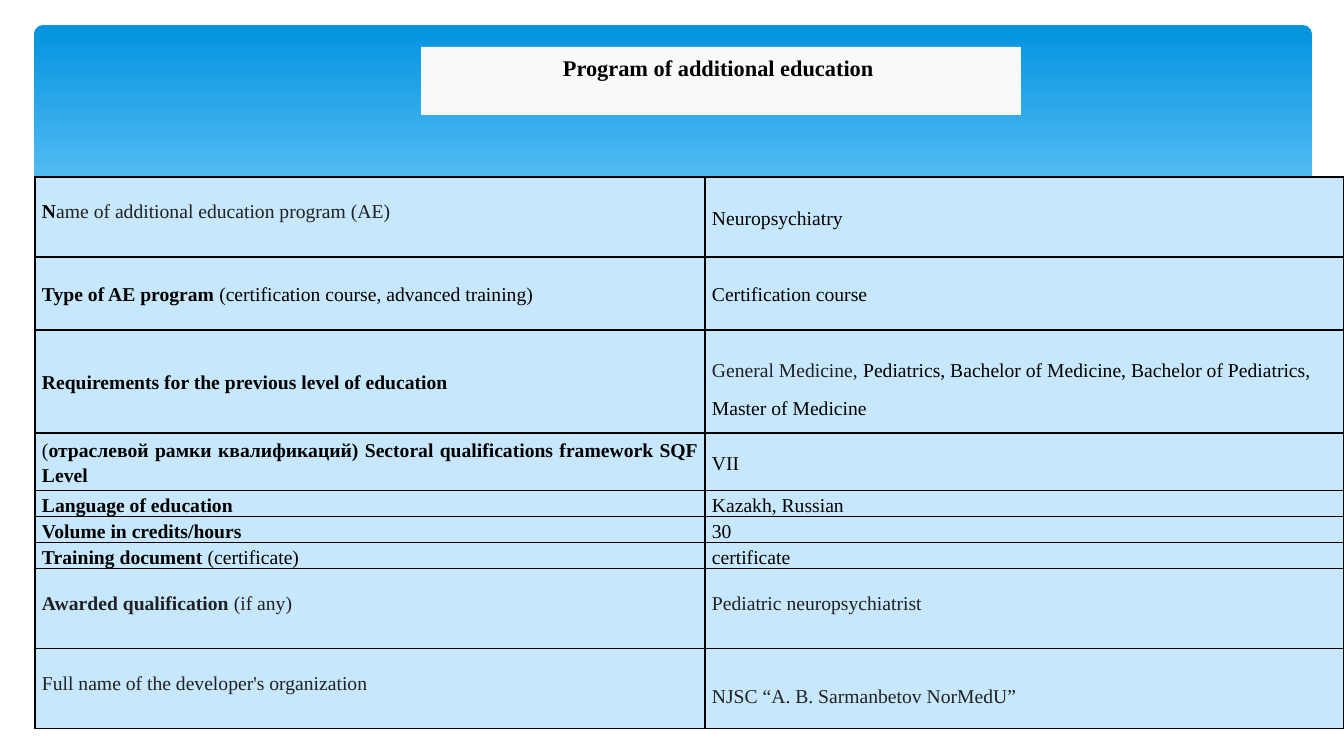
import dataclasses

import lxml.etree
import pptx
import pptx.dml.color
import pptx.enum.dml
import pptx.enum.shapes
import pptx.enum.text
import pptx.oxml.ns
import pptx.util

ALIGN = pptx.enum.text.PP_ALIGN
ANCHOR = pptx.enum.text.MSO_ANCHOR


@dataclasses.dataclass(frozen=True)
class Theme:
    font: str = "Times New Roman"
    title_size: int = 16
    cell_size: int = 14
    loose_line: int = 27
    tight_line: float = 1.15
    black: str = "000000"
    dark: str = "202124"
    white: str = "FFFFFF"
    title_fill: str = "F8F9FA"
    cell_fill: str = "C6E7FC"
    band_top: str = "0293E0"
    band_bottom: str = "83D3FE"


THEME = Theme()
LOOSE, TIGHT = "loose", "tight"
LOW_MARGIN = 26
COLUMNS = [670, 639]
ROW_HEIGHTS = [80, 73, 103, 58, 26, 26, 26, 80, 80]
WAVE = [(31, 215), (72, 206), (142, 193), (216, 186), (308, 187), (425, 198),
        (601, 222), (776, 251), (925, 270), (1065, 279), (1160, 276),
        (1251, 264), (1313, 248), (1313, 332), (31, 332)]


def bold(text, color=THEME.black):
    return text, True, color


def plain(text, color=THEME.black):
    return text, False, color


ROWS = [
    [(LOOSE, LOW_MARGIN, [bold("N"), plain("ame of additional education program (AE)", THEME.dark)]),
     (TIGHT, 0, [plain("Neuropsychiatry")])],
    [(TIGHT, 0, [bold("Type of AE program "), plain("(certification course, advanced training)")]),
     (TIGHT, 0, [plain("Certification course")])],
    [(TIGHT, 0, [bold("Requirements for the previous level of education")]),
     (LOOSE, 0, [plain("General Medicine, ", THEME.dark),
                 plain("Pediatrics, Bachelor of Medicine, Bachelor of Pediatrics, Master of Medicine")])],
    [(TIGHT, 0, [plain("("),
                 bold("отраслевой рамки квалификаций) Sectoral qualifications framework SQF Level")]),
     (TIGHT, 0, [plain("VII")])],
    [(TIGHT, 0, [bold("Language of education")]),
     (TIGHT, 0, [plain("Kazakh, Russian")])],
    [(TIGHT, 0, [bold("Volume in credits/hours")]),
     (TIGHT, 0, [plain("30")])],
    [(TIGHT, 0, [bold("Training document"), plain(" (certificate)")]),
     (TIGHT, 0, [plain("certificate")])],
    [(LOOSE, LOW_MARGIN, [bold("Awarded qualification", THEME.dark), plain(" (if any)", THEME.dark)]),
     (LOOSE, LOW_MARGIN, [plain("Pediatric neuropsychiatrist", THEME.dark)])],
    [(LOOSE, LOW_MARGIN, [plain("Full name of the developer's organization", THEME.dark)]),
     (LOOSE, 0, [plain("NJSC “A. B. Sarmanbetov NorMedU”", THEME.dark)])],
]


def px(n):
    return pptx.util.Emu(round(n * 914400 / 100.8))


def rgb(color):
    return pptx.dml.color.RGBColor.from_string(color)


def add_run(p, text, is_bold, color, size):
    r = p.add_run()
    r.text = text
    r.font.name = THEME.font
    r.font.size = pptx.util.Pt(size)
    r.font.bold = is_bold
    r.font.color.rgb = rgb(color)


def add_band(s):
    sp = s.shapes.add_shape(pptx.enum.shapes.MSO_SHAPE.ROUNDED_RECTANGLE,
                            px(34), px(25), px(1278), px(272))
    sp.adjustments[0] = 0.034
    sp.shadow.inherit = False
    sp.line.fill.background()
    sp.fill.gradient()
    sp.fill.gradient_angle = 270
    first, last = sp.fill.gradient_stops
    first.color.rgb, first.position = rgb(THEME.band_top), 0
    last.color.rgb, last.position = rgb(THEME.band_bottom), 0.9


def add_wave(s):
    points = [(px(x), px(y)) for x, y in WAVE]
    builder = s.shapes.build_freeform(*points[0])
    builder.add_line_segments(points[1:], close=True)
    sp = builder.convert_to_shape()
    sp.shadow.inherit = False
    sp.fill.solid()
    sp.fill.fore_color.rgb = rgb(THEME.white)
    sp.line.fill.background()


def set_borders(cell):
    tc_pr = cell._tc.get_or_add_tcPr()
    for i, side in enumerate(["lnL", "lnR", "lnT", "lnB"]):
        ln = lxml.etree.Element(pptx.oxml.ns.qn("a:" + side), w="12700")
        fill = lxml.etree.SubElement(ln, pptx.oxml.ns.qn("a:solidFill"))
        lxml.etree.SubElement(fill, pptx.oxml.ns.qn("a:srgbClr"), val=THEME.black)
        tc_pr.insert(i, ln)


def fill_cell(cell, spacing, low_margin, runs):
    cell.fill.solid()
    cell.fill.fore_color.rgb = rgb(THEME.cell_fill)
    cell.vertical_anchor = ANCHOR.MIDDLE
    cell.margin_left = cell.margin_right = px(7)
    cell.margin_top = 0
    cell.margin_bottom = px(low_margin)
    set_borders(cell)
    p = cell.text_frame.paragraphs[0]
    if spacing == LOOSE:
        p.line_spacing = pptx.util.Pt(THEME.loose_line)
    else:
        p.line_spacing = THEME.tight_line
        p.alignment = ALIGN.JUSTIFY
    for text, is_bold, color in runs:
        add_run(p, text, is_bold, color, THEME.cell_size)


def add_program_table(s):
    frame = s.shapes.add_table(len(ROWS), len(COLUMNS), px(35), px(177),
                               px(sum(COLUMNS)), px(sum(ROW_HEIGHTS)))
    table = frame.table
    table.first_row = table.horz_banding = False
    for column, width in zip(table.columns, COLUMNS):
        column.width = px(width)
    for row, height, contents in zip(table.rows, ROW_HEIGHTS, ROWS):
        row.height = px(height)
        for cell, content in zip(row.cells, contents):
            fill_cell(cell, *content)


def add_title(s, text):
    sp = s.shapes.title
    s.shapes._spTree.append(sp._element)
    sp.left, sp.top, sp.width, sp.height = px(421), px(47), px(600), px(68)
    sp.fill.solid()
    sp.fill.fore_color.rgb = rgb(THEME.title_fill)
    tf = sp.text_frame
    tf.word_wrap = True
    tf.auto_size = pptx.enum.text.MSO_AUTO_SIZE.NONE
    tf.vertical_anchor = ANCHOR.TOP
    tf.margin_top = px(7)
    p = tf.paragraphs[0]
    p.alignment = ALIGN.CENTER
    p.line_spacing = 1.0
    p.space_before = pptx.util.Pt(0)
    add_run(p, text, True, THEME.black, THEME.title_size)


def main():
    prs = pptx.Presentation()
    prs.slide_width, prs.slide_height = px(1344), px(756)
    s = prs.slides.add_slide(prs.slide_layouts[5])
    add_band(s)
    add_wave(s)
    add_program_table(s)
    add_title(s, "Program of additional education ")
    prs.save("out.pptx")


if __name__ == "__main__":
    main()
